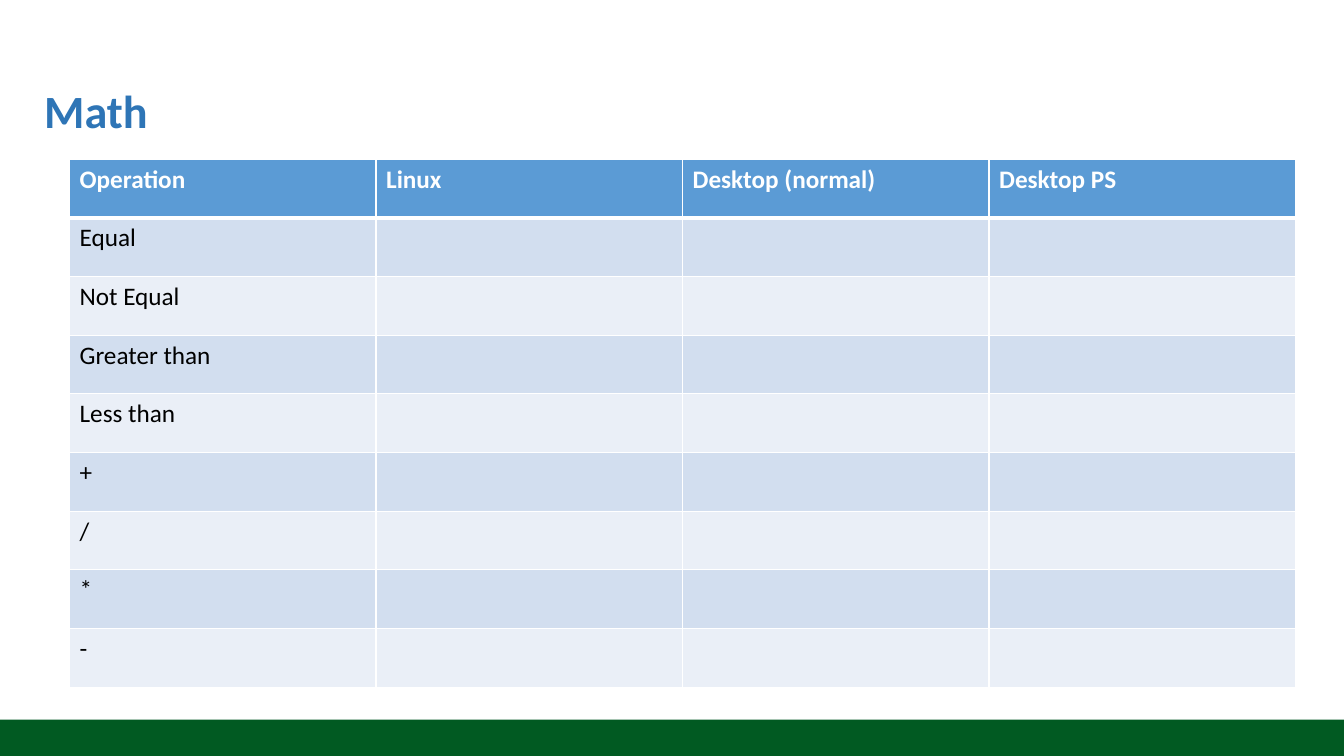
import pptx
import pptx.dml.color
import pptx.enum.shapes
import pptx.enum.text
import pptx.oxml
import pptx.oxml.ns
import pptx.util

Inches = pptx.util.Inches
Pt = pptx.util.Pt

FONT = "Calibri"
WHITE = "FFFFFF"
HEADER_FILL = "5B9BD5"
BAND_FILLS = ("D2DEEF", "EAEFF7")
HEADINGS = ("Operation", "Linux", "Desktop (normal)", "Desktop PS")
OPERATIONS = ("Equal", "Not Equal", "Greater than", "Less than", "+", "/", "*", "-")


def color(value):
    return pptx.dml.color.RGBColor.from_string(value)


def add_text(paragraph, text, size, ink, bold):
    run = paragraph.add_run()
    run.text = text
    run.font.name = FONT
    run.font.size = Pt(size)
    run.font.bold = bold
    run.font.color.rgb = color(ink)


def add_footer(slide, left, top, width, height):
    band = slide.shapes.add_shape(
        pptx.enum.shapes.MSO_SHAPE.RECTANGLE,
        Inches(left), Inches(top), Inches(width), Inches(height))
    band.shadow.inherit = False
    band.fill.solid()
    band.fill.fore_color.rgb = color("015A22")
    band.line.fill.background()


def add_title(slide, left, top, width, height):
    title = slide.shapes.add_textbox(
        Inches(left), Inches(top), Inches(width), Inches(height))
    frame = title.text_frame
    frame.word_wrap = True
    frame.vertical_anchor = pptx.enum.text.MSO_ANCHOR.MIDDLE
    frame.paragraphs[0].line_spacing = 0.9
    add_text(frame.paragraphs[0], "Math", 33, "2E75B6", True)


def add_borders(cell, widths):
    properties = cell._tc.get_or_add_tcPr()
    for side, width in widths.items():
        properties.append(pptx.oxml.parse_xml(
            f'<a:ln{side} {pptx.oxml.ns.nsdecls("a")} w="{Pt(width)}">'
            f'<a:solidFill><a:srgbClr val="{WHITE}"/></a:solidFill></a:ln{side}>'))


def add_operations(slide, left, top, width, height):
    rows = [HEADINGS] + [(operation, "", "", "") for operation in OPERATIONS]
    operations = slide.shapes.add_table(
        len(rows), len(HEADINGS),
        Inches(left), Inches(top), Inches(width), Inches(height)).table
    operations.horz_banding = False
    for column in operations.columns:
        column.width = Inches(width / len(HEADINGS))
    for index, texts in enumerate(rows):
        operations.rows[index].height = Inches(height / len(rows))
        header = index == 0
        for column, text in enumerate(texts):
            cell = operations.cell(index, column)
            add_borders(cell, {"L": 1, "R": 1,
                               "T": 3 if index == 1 else 1,
                               "B": 3 if header else 1})
            cell.fill.solid()
            cell.fill.fore_color.rgb = color(
                HEADER_FILL if header else BAND_FILLS[(index - 1) % 2])
            if text:
                add_text(cell.text_frame.paragraphs[0], text, 18,
                         WHITE if header else "000000", header)


def main():
    presentation = pptx.Presentation()
    presentation.slide_width = Inches(13.33)
    presentation.slide_height = Inches(7.5)
    slide = presentation.slides.add_slide(presentation.slide_layouts[6])
    add_footer(slide, 0, 7.14, 13.33, 0.36)
    add_title(slide, 0.34, 0.4, 12.68, 1.45)
    add_operations(slide, 0.69, 1.58, 12.16, 5.24)
    presentation.save("out.pptx")


if __name__ == "__main__":
    main()
